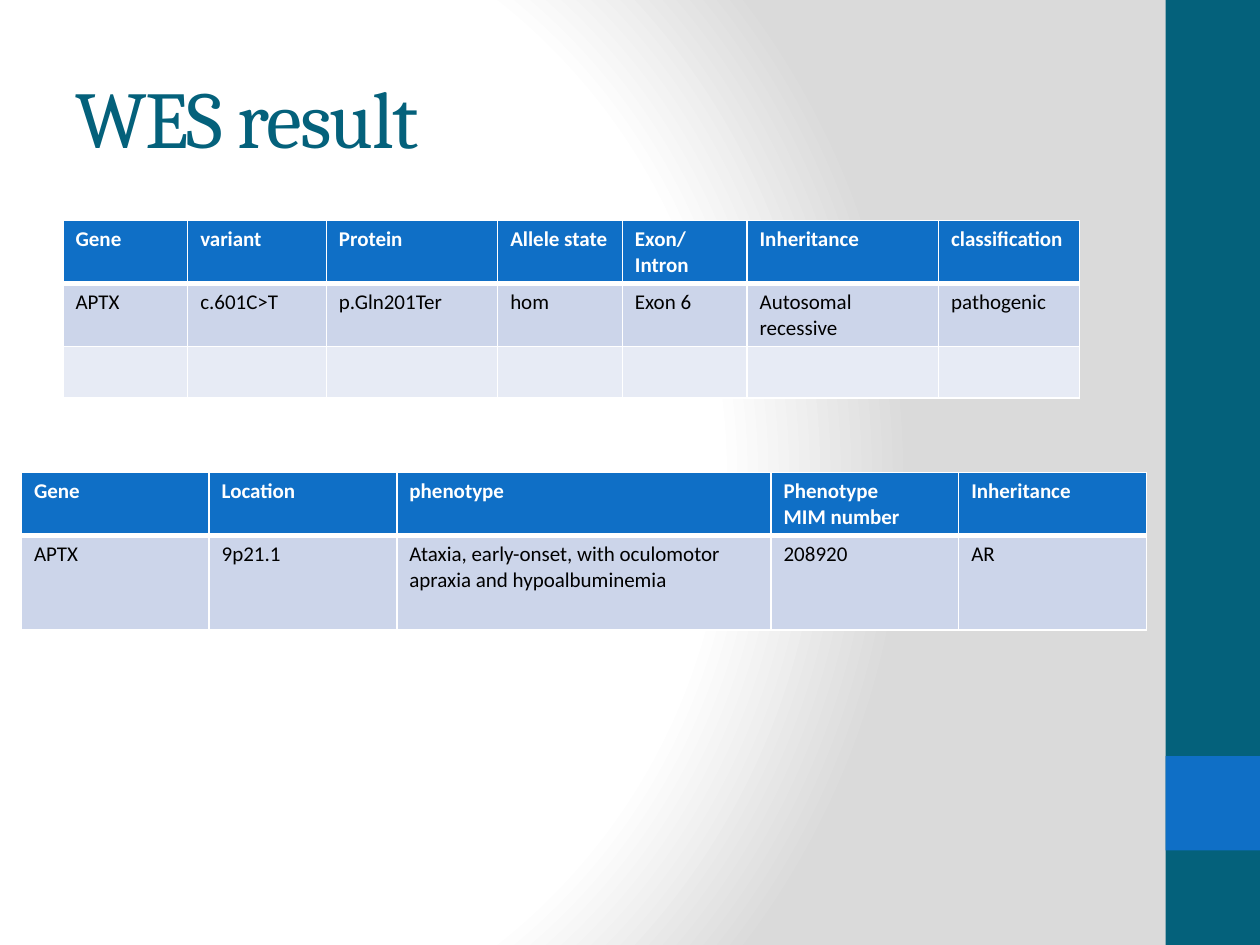
from dataclasses import dataclass

from lxml import etree
from pptx import Presentation
from pptx.dml.color import RGBColor
from pptx.enum.shapes import MSO_SHAPE
from pptx.enum.text import MSO_ANCHOR
from pptx.oxml import parse_xml
from pptx.oxml.ns import qn
from pptx.util import Inches, Pt

RECT = MSO_SHAPE.RECTANGLE
MIDDLE = MSO_ANCHOR.MIDDLE
DRAWING_NS = "http://schemas.openxmlformats.org/drawingml/2006/main"
COLORS = {
    "white": "FFFFFF",
    "gray": "DADADA",
    "teal": "04617B",
    "blue": "0F6FC6",
    "band_dark": "CCD5EA",
    "band_light": "E7EBF5",
    "black": "000000",
}


@dataclass
class Bar:
    top: float
    height: float
    color: str


@dataclass
class TableBlock:
    left: float
    top: float
    col_widths: list[float]
    row_heights: list[float]
    rows: list[list[str]]


BARS = [Bar(0, 7.5, "teal"), Bar(6, 0.75, "blue")]
TABLES = [
    TableBlock(
        0.5, 1.75, [0.99, 1.1, 1.36, 0.99, 0.99, 1.52, 1.12], [0.41] * 3,
        [
            ["Gene", "variant", "Protein", "Allele state", "Exon/ Intron",
             "Inheritance", "classification"],
            ["APTX", "c.601C>T", "p.Gln201Ter", "hom", "Exon 6",
             "Autosomal recessive", "pathogenic"],
            [""] * 7,
        ],
    ),
    TableBlock(
        0.17, 3.75, [1.49, 1.49, 2.97, 1.49, 1.49], [0.42, 0.75],
        [
            ["Gene", "Location", "phenotype", "Phenotype \vMIM number", "Inheritance"],
            ["APTX", "9p21.1",
             "Ataxia, early-onset, with oculomotor apraxia and hypoalbuminemia",
             "208920", "AR"],
        ],
    ),
]


def rgb(name: str) -> RGBColor:
    return RGBColor.from_string(COLORS[name])


def write_text(tf, text: str, *, size: float, font: str, color: str,
               bold: bool = False, spacing: float = 0) -> None:
    p = tf.paragraphs[0]
    p.text = text
    for r in p.runs:
        r.font.size = Pt(size)
        r.font.name = font
        r.font.bold = bold
        r.font.color.rgb = rgb(color)
        if spacing:
            r.font._element.set("spc", str(int(spacing * 100)))


def set_background(s) -> None:
    fill = s.background.fill
    fill.gradient()
    old = next(s.element.iter(qn("a:gradFill")))
    stops = "".join(
        f'<a:gs pos="{pos * 1000}"><a:srgbClr val="{COLORS[name]}"/></a:gs>'
        for pos, name in [(0, "white"), (75, "white"), (100, "gray")]
    )
    new = parse_xml(
        f'<a:gradFill xmlns:a="{DRAWING_NS}" rotWithShape="1"><a:gsLst>{stops}</a:gsLst>'
        '<a:path path="circle"><a:fillToRect l="20000" t="50000" r="100000" b="50000"/>'
        "</a:path></a:gradFill>"
    )
    old.getparent().replace(old, new)


def add_bar(s, bar: Bar) -> None:
    sp = s.shapes.add_shape(RECT, Inches(9.25), Inches(bar.top),
                            Inches(0.75), Inches(bar.height))
    sp.shadow.inherit = False
    sp.fill.solid()
    sp.fill.fore_color.rgb = rgb(bar.color)
    sp.line.fill.background()


def add_title(s, text: str) -> None:
    sp = s.shapes.add_textbox(Inches(0.5), Inches(0.3), Inches(8.33), Inches(1.25))
    tf = sp.text_frame
    tf.word_wrap = True
    tf.vertical_anchor = MIDDLE
    write_text(tf, text, size=46, font="Cambria", color="teal", spacing=-1)


def set_borders(cell, widths: dict[str, float]) -> None:
    tc_pr = cell._tc.get_or_add_tcPr()
    for side, width in widths.items():
        ln = etree.SubElement(tc_pr, qn(f"a:ln{side}"), w=str(Pt(width)))
        solid = etree.SubElement(ln, qn("a:solidFill"))
        etree.SubElement(solid, qn("a:srgbClr"), val=COLORS["white"])


def add_table(s, block: TableBlock) -> None:
    table = s.shapes.add_table(
        len(block.rows), len(block.col_widths), Inches(block.left), Inches(block.top),
        Inches(sum(block.col_widths)), Inches(sum(block.row_heights)),
    ).table
    for column, width in zip(table.columns, block.col_widths):
        column.width = Inches(width)
    for row, height in zip(table.rows, block.row_heights):
        row.height = Inches(height)
    fills = ["blue", "band_dark", "band_light"]
    for i, texts in enumerate(block.rows):
        header = i == 0
        for j, text in enumerate(texts):
            cell = table.cell(i, j)
            set_borders(cell, {"L": 1, "R": 1, "T": 3 if i == 1 else 1,
                               "B": 3 if header else 1})
            cell.fill.solid()
            cell.fill.fore_color.rgb = rgb(fills[i])
            write_text(cell.text_frame, text, size=12, font="Calibri",
                       color="white" if header else "black", bold=header)


def main() -> None:
    """Build the WES result slide."""
    prs = Presentation()
    prs.slide_width, prs.slide_height = Inches(10), Inches(7.5)
    s = prs.slides.add_slide(prs.slide_layouts[6])
    set_background(s)
    for bar in BARS:
        add_bar(s, bar)
    add_title(s, "WES result")
    for block in TABLES:
        add_table(s, block)
    prs.save("out.pptx")


if __name__ == "__main__":
    main()
